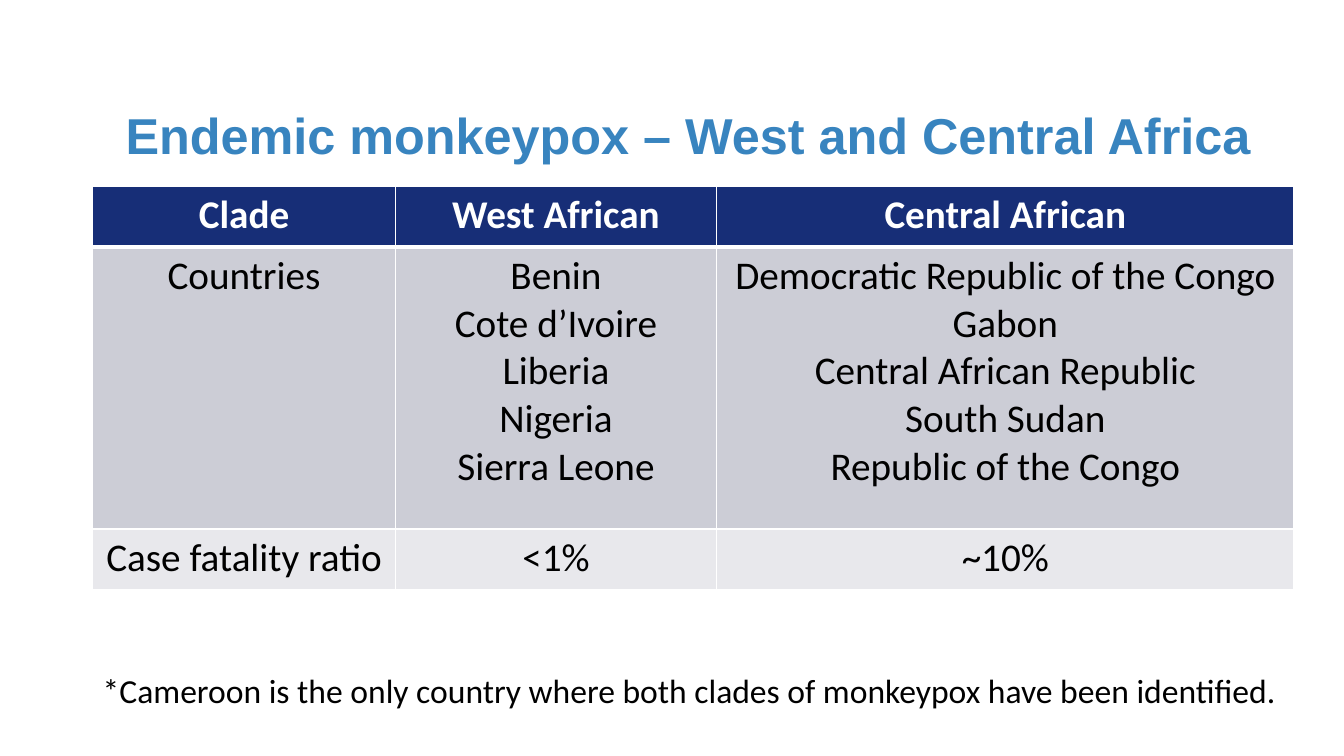
from lxml.etree import SubElement as Sub
from pptx import Presentation
from pptx.dml.color import RGBColor as Rgb
from pptx.enum.text import MSO_ANCHOR as Anchor, PP_ALIGN as Align
from pptx.oxml.ns import qn
from pptx.util import Cm, Pt

WHITE = Rgb(0xFF, 0xFF, 0xFF)
BLACK = Rgb(0, 0, 0)
BLUE = Rgb(0x38, 0x84, 0xBF)
NAVY = Rgb(0x17, 0x2E, 0x77)
GREY = Rgb(0xCC, 0xCD, 0xD6)
PALE = Rgb(0xE8, 0xE8, 0xEC)

COLS = [7.62, 8.1, 14.55]
ROWS = [
    (1.52, NAVY, ["Clade", "West African", "Central African"]),
    (7.11, GREY, [
        "Countries",
        "Benin\nCote d’Ivoire\nLiberia\nNigeria\nSierra Leone",
        "Democratic Republic of the Congo\nGabon\nCentral African Republic\n"
        "South Sudan\nRepublic of the Congo",
    ]),
    (1.52, PALE, ["Case fatality ratio", "<1%", "~10%"]),
]


def write(frame, text, size=28, font="Calibri", color=BLACK, bold=False,
          align=Align.CENTER):
    frame.text = text
    for para in frame.paragraphs:
        para.alignment = align
        para.font.size = Pt(size)
        para.font.name = font
        para.font.color.rgb = color
        para.font.bold = bold


def add_box(slide, box):
    frame = slide.shapes.add_textbox(*map(Cm, box)).text_frame
    frame.word_wrap = True
    return frame


def add_title(slide, box):
    frame = add_box(slide, box)
    frame.margin_left = frame.margin_right = 0
    frame.margin_top = frame.margin_bottom = 0
    frame.vertical_anchor = Anchor.MIDDLE
    write(frame, "Endemic monkeypox – West and Central Africa",
          size=36, font="Arial", color=BLUE, bold=True)


def add_edges(cell, top, base):
    props = cell._tc.get_or_add_tcPr()
    for side, width in (("L", 1), ("R", 1), ("T", top), ("B", base)):
        line = Sub(props, qn("a:ln" + side), w=str(Pt(width)))
        fill = Sub(line, qn("a:solidFill"))
        Sub(fill, qn("a:srgbClr"), val=str(WHITE))


def add_grid(slide, box):
    table = slide.shapes.add_table(len(ROWS), len(COLS), *map(Cm, box)).table
    for col, width in zip(table.columns, COLS):
        col.width = Cm(width)
    for r, (height, shade, texts) in enumerate(ROWS):
        table.rows[r].height = Cm(height)
        head = r == 0
        for c, text in enumerate(texts):
            cell = table.cell(r, c)
            add_edges(cell, 3 if r == 1 else 1, 3 if head else 1)
            cell.fill.solid()
            cell.fill.fore_color.rgb = shade
            write(cell.text_frame, text, color=WHITE if head else BLACK,
                  bold=head)


def add_note(slide, box):
    write(add_box(slide, box),
          "*Cameroon is the only country where both clades of monkeypox "
          "have been identified.", size=24, align=Align.LEFT)


def main():
    deck = Presentation()
    deck.slide_width, deck.slide_height = Cm(33.87), Cm(19.05)
    slide = deck.slides.add_slide(deck.slide_layouts[6])
    add_title(slide, (2.11, 1.8, 30.48, 3.18))
    add_grid(slide, (2.34, 4.7, sum(COLS), sum(row[0] for row in ROWS)))
    add_note(slide, (2.34, 16.76, 30.38, 1.27))
    deck.save("out.pptx")


if __name__ == "__main__":
    main()
